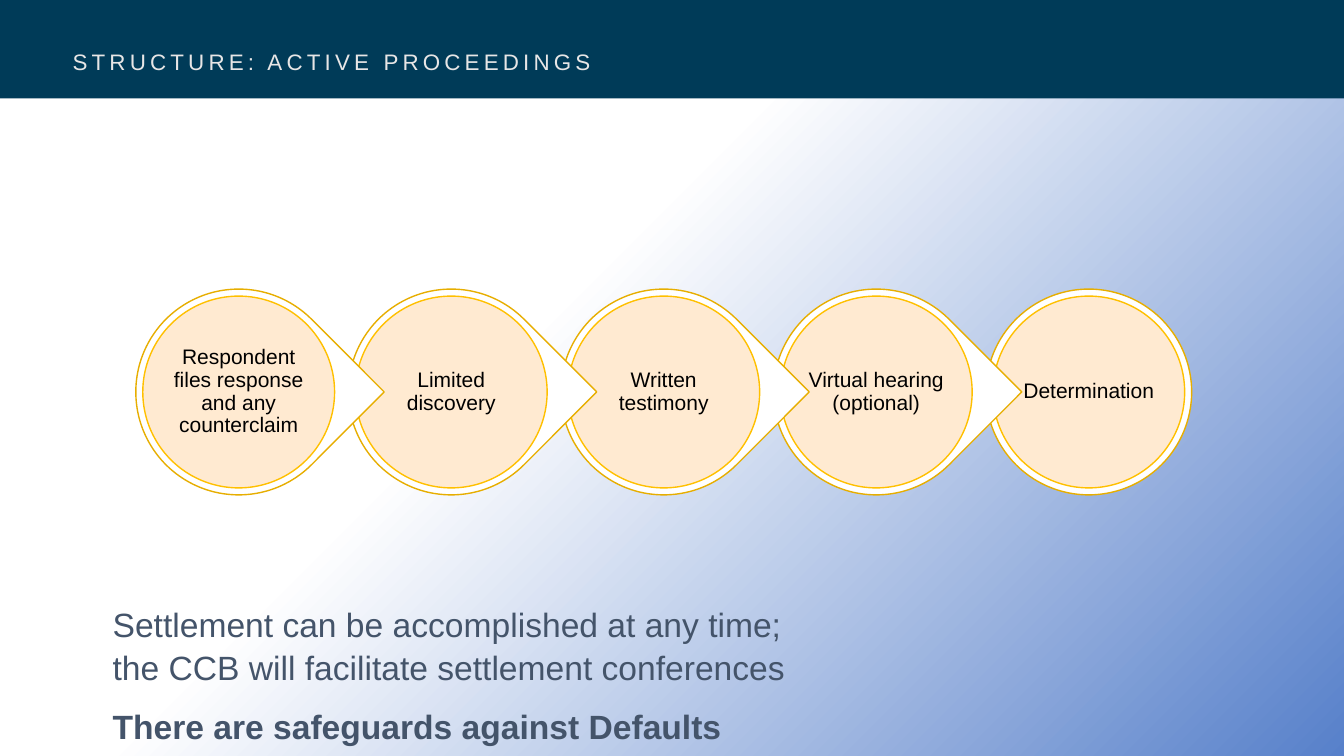
"""Builds the slide on the structure of active proceedings."""
from pptx import Presentation
from pptx.dml.color import RGBColor
from pptx.enum.shapes import MSO_SHAPE
from pptx.enum.text import MSO_ANCHOR, PP_ALIGN
from pptx.oxml.ns import qn
from pptx.util import Pt

RECT, OVAL, TEAR = MSO_SHAPE.RECTANGLE, MSO_SHAPE.OVAL, MSO_SHAPE.TEAR
MIDDLE, BOTTOM, CENTER = MSO_ANCHOR.MIDDLE, MSO_ANCHOR.BOTTOM, PP_ALIGN.CENTER


def rgb(value):
    return RGBColor.from_string(value)


def add_shape(kind, x, y, w, h, fill, line=None):
    sp = s.shapes.add_shape(kind, Pt(x), Pt(y), Pt(w), Pt(h))
    sp.shadow.inherit = False
    sp.fill.solid()
    sp.fill.fore_color.rgb = rgb(fill)
    if line:
        sp.line.color.rgb = rgb(line)
        sp.line.width = Pt(1)
    else:
        sp.line.fill.background()
    return sp


prs = Presentation()
prs.slide_width, prs.slide_height = Pt(960), Pt(540)
s = prs.slides.add_slide(prs.slide_layouts[6])

bg = s.background.fill
bg.gradient()
bg.gradient_angle = 315
for stop, (position, color) in zip(bg.gradient_stops, [(0.41, "FFFFFF"), (1, "5780CA")]):
    stop.position = position
    stop.color.rgb = rgb(color)

add_shape(RECT, 0, 0, 960, 70.4, "003B58")

title = s.shapes.add_textbox(Pt(44.8), Pt(0), Pt(867.6), Pt(57.6))
tf = title.text_frame
tf.word_wrap = True
tf.vertical_anchor = BOTTOM
tf.text = "STRUCTURE: ACTIVE PROCEEDINGS"
p = tf.paragraphs[0]
p.line_spacing = 0.9
r = p.runs[0]
r.font.name, r.font.size = "Arial", Pt(16)
r.font.color.rgb = rgb("E7E6E6")
r.font._element.set("spc", "300")

body = s.shapes.add_textbox(Pt(73.4), Pt(426.2), Pt(509), Pt(84.2))
tf = body.text_frame
tf.word_wrap = True
tf.text = ("Settlement can be accomplished at any time; "
           "the CCB will facilitate settlement conferences\n"
           "There are safeguards against Defaults")
for i, p in enumerate(tf.paragraphs):
    p.line_spacing = 1.06
    p.space_before = Pt(6 * i)
    p.space_after = Pt(6)
    r = p.runs[0]
    r.font.name, r.font.size, r.font.bold = "Arial", Pt(24), i == 1
    r.font.color.rgb = rgb("44546A")

steps = ["Respondent files response and any counterclaim", "Limited discovery",
         "Written testimony", "Virtual hearing (optional)", "Determination"]
first_x, center_y, pitch = 170.5, 280, 151.8
ring_size, disc_size = 147, 137

for i in reversed(range(len(steps))):
    center_x = first_x + i * pitch
    last = i == len(steps) - 1
    ring = add_shape(OVAL if last else TEAR, center_x - ring_size / 2,
                     center_y - ring_size / 2, ring_size, ring_size, "FFFFFF", "E7AE00")
    if not last:
        ring.rotation = 45
    disc = add_shape(OVAL, center_x - disc_size / 2, center_y - disc_size / 2,
                     disc_size, disc_size, "FFE8CC", "FFC000")
    color = disc.fill._xPr.find(qn("a:solidFill"))[0]
    color.append(color.makeelement(qn("a:alpha"), {"val": "90000"}))
    tf = disc.text_frame
    tf.margin_left = tf.margin_right = tf.margin_top = tf.margin_bottom = 0
    tf.word_wrap = True
    tf.vertical_anchor = MIDDLE
    tf.text = steps[i]
    p = tf.paragraphs[0]
    p.alignment = CENTER
    p.line_spacing = 0.9
    r = p.runs[0]
    r.font.name, r.font.size = "Arial", Pt(15)
    r.font.color.rgb = rgb("000000")

prs.save("out.pptx")
